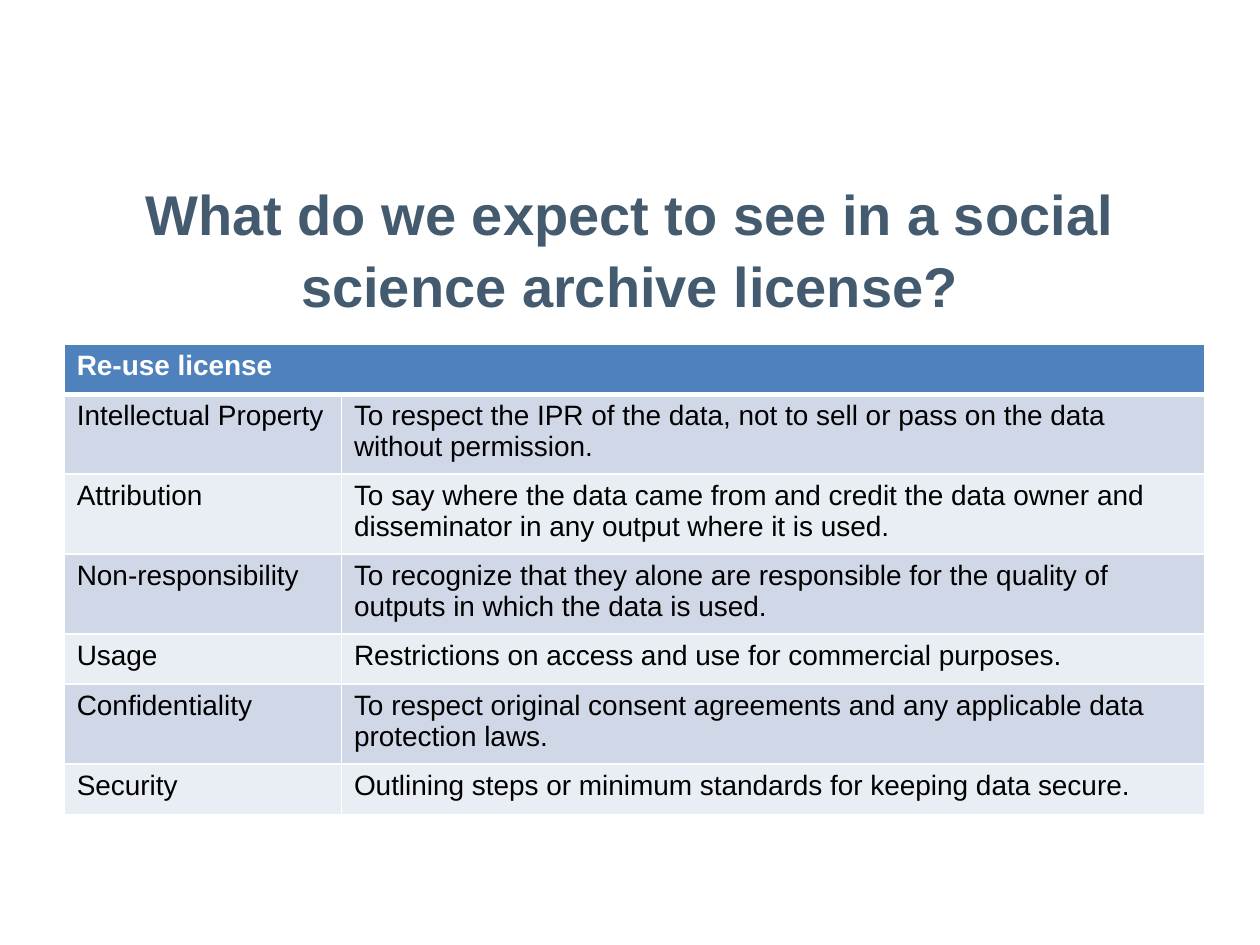
"""Build a slide that lists the terms of a social science archive license."""
from dataclasses import dataclass

from lxml import etree
from pptx import Presentation
from pptx import util as u
from pptx.dml.color import RGBColor
from pptx.enum import text
from pptx.oxml import ns
from pptx.slide import Slide
from pptx.table import _Cell
from pptx.text.text import TextFrame

WHITE = RGBColor(0xFF, 0xFF, 0xFF)
BLACK = RGBColor(0x00, 0x00, 0x00)
SLATE = RGBColor(0x44, 0x5A, 0x6F)
HEADER_BLUE = RGBColor(0x4F, 0x81, 0xBD)
BANDS = (RGBColor(0xD0, 0xD8, 0xE8), RGBColor(0xE9, 0xED, 0xF4))

FONT = "Arial"
SLIDE_WIDTH, SLIDE_HEIGHT = u.Inches(10), u.Inches(7.5)
COLUMN_WIDTHS = (u.Inches(2.2), u.Inches(6.85))
ROW_HEIGHT = u.Inches(0.4)
TITLE = "What do we expect to see in a social science archive license?"
HEADING = "Re-use license"


@dataclass(frozen=True)
class Term:
    """One license term and what it asks for."""
    name: str
    meaning: str


@dataclass(frozen=True)
class Style:
    """The look of a piece of text."""
    size: int
    color: RGBColor
    bold: bool = False


TITLE_STYLE = Style(32, SLATE, True)
HEADING_STYLE = Style(16, WHITE, True)
BODY_STYLE = Style(16, BLACK)

TERMS = (
    Term("Intellectual Property",
         "To respect the IPR of the data, not to sell or pass on the data without permission."),
    Term("Attribution",
         "To say where the data came from and credit the data owner and disseminator "
         "in any output where it is used."),
    Term("Non-responsibility",
         "To recognize that they alone are responsible for the quality of outputs "
         "in which the data is used."),
    Term("Usage", "Restrictions on access and use for commercial purposes."),
    Term("Confidentiality",
         "To respect original consent agreements and any applicable data protection laws."),
    Term("Security", "Outlining steps or minimum standards for keeping data secure."),
)


def write(frame: TextFrame, words: str, style: Style) -> None:
    """Put one styled run into the first paragraph of a frame."""
    run = frame.paragraphs[0].add_run()
    run.text = words
    run.font.name = FONT
    run.font.size = u.Pt(style.size)
    run.font.bold = style.bold
    run.font.color.rgb = style.color


def set_borders(cell: _Cell, top: int, bottom: int) -> None:
    """Give a cell white borders, with top and bottom widths in points."""
    properties = cell._tc.get_or_add_tcPr()
    widths = {"lnL": 1, "lnR": 1, "lnT": top, "lnB": bottom}
    for position, (side, width) in enumerate(widths.items()):
        line = etree.Element(ns.qn(f"a:{side}"), w=str(u.Pt(width)))
        fill = etree.SubElement(line, ns.qn("a:solidFill"))
        etree.SubElement(fill, ns.qn("a:srgbClr"), val=str(WHITE))
        properties.insert(position, line)


def fill_cell(cell: _Cell, words: str, style: Style, color: RGBColor,
              top: int = 1, bottom: int = 1) -> None:
    """Write, fill and frame one table cell."""
    cell.fill.solid()
    cell.fill.fore_color.rgb = color
    set_borders(cell, top, bottom)
    if words:
        write(cell.text_frame, words, style)


def add_title(slide: Slide) -> None:
    """Add the centred slide title."""
    margin = int(SLIDE_WIDTH * 0.05)
    shape = slide.shapes.add_textbox(margin, u.Inches(1.33),
                                     SLIDE_WIDTH - 2 * margin, u.Inches(1.25))
    frame = shape.text_frame
    frame.word_wrap = True
    frame.vertical_anchor = text.MSO_ANCHOR.MIDDLE
    paragraph = frame.paragraphs[0]
    paragraph.alignment = text.PP_ALIGN.CENTER
    paragraph.line_spacing = 1.08
    write(frame, TITLE, TITLE_STYLE)


def add_terms(slide: Slide) -> None:
    """Add the table of license terms under a merged heading row."""
    rows = len(TERMS) + 1
    table = slide.shapes.add_table(rows, len(COLUMN_WIDTHS), u.Inches(0.51), u.Inches(2.73),
                                   sum(COLUMN_WIDTHS), ROW_HEIGHT * rows).table
    for column, width in zip(table.columns, COLUMN_WIDTHS):
        column.width = width
    for row in table.rows:
        row.height = ROW_HEIGHT
    table.cell(0, 0).merge(table.cell(0, 1))
    for column, words in enumerate((HEADING, "")):
        fill_cell(table.cell(0, column), words, HEADING_STYLE, HEADER_BLUE, bottom=3)
    for row, term in enumerate(TERMS, start=1):
        color = BANDS[(row - 1) % len(BANDS)]
        top = 3 if row == 1 else 1
        for column, words in enumerate((term.name, term.meaning)):
            fill_cell(table.cell(row, column), words, BODY_STYLE, color, top=top)


def main() -> None:
    """Create and save the presentation."""
    presentation = Presentation()
    presentation.slide_width, presentation.slide_height = SLIDE_WIDTH, SLIDE_HEIGHT
    slide = presentation.slides.add_slide(presentation.slide_layouts[6])
    add_title(slide)
    add_terms(slide)
    presentation.save("out.pptx")


if __name__ == "__main__":
    main()
